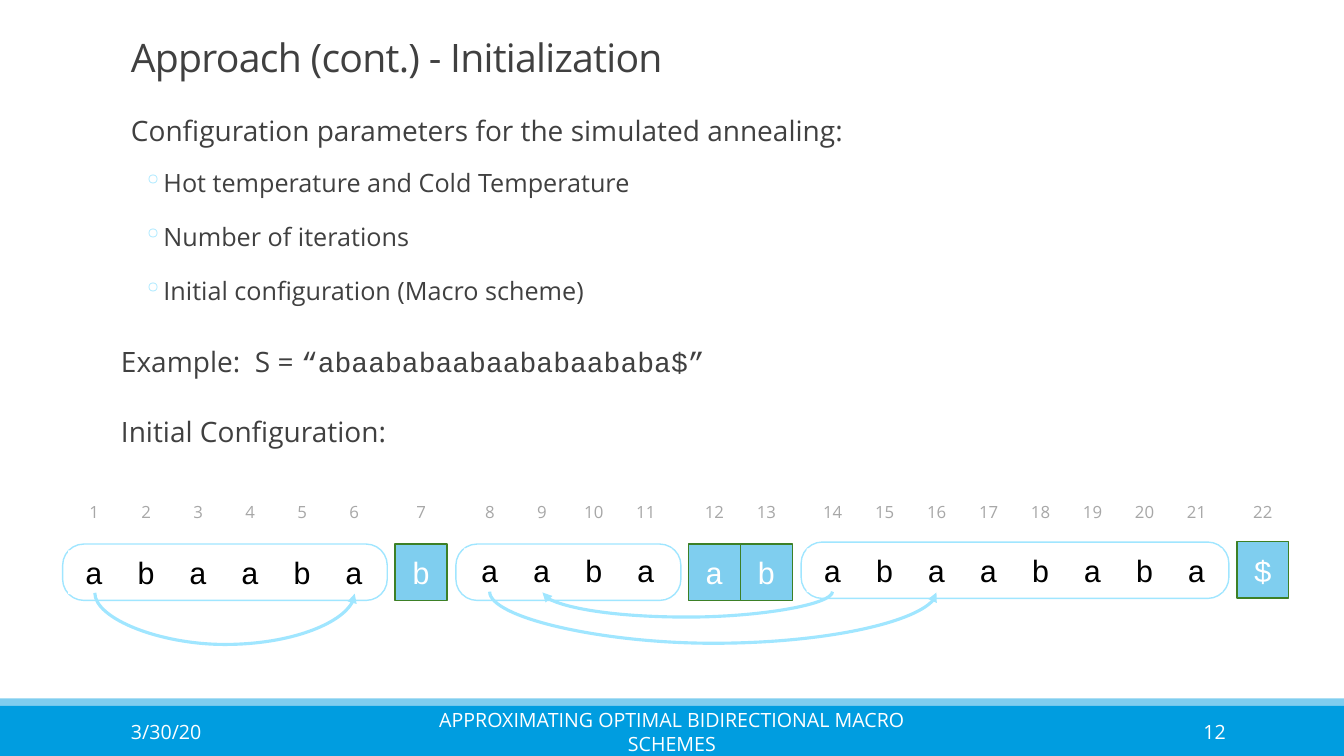
from lxml import etree
from pptx import Presentation
from pptx import util as u
from pptx.dml.color import RGBColor
from pptx.enum import shapes, text
from pptx.oxml import ns

WHITE = RGBColor(0xFF, 0xFF, 0xFF)
BLACK = RGBColor(0, 0, 0)
DARK_GREY = RGBColor(0x40, 0x40, 0x40)
INDEX_GREY = RGBColor(0xA7, 0xA7, 0xA7)
BLUE = RGBColor(0x00, 0x9D, 0xE0)
LIGHT_BLUE = RGBColor(0xA0, 0xE6, 0xFF)
LITERAL_BLUE = RGBColor(0x7F, 0xCE, 0xEF)
GREEN = RGBColor(0x3D, 0x80, 0x26)
SANS, MONO = "Open Sans", "Courier New"
ALIGN, ANCHOR = text.PP_ALIGN, text.MSO_ANCHOR

deck = Presentation()
deck.slide_width, deck.slide_height = u.Cm(33.87), u.Cm(19.05)
page = deck.slides.add_slide(deck.slide_layouts[6])


def add_block(kind, left, top, width, height, fill, line=None):
    block = page.shapes.add_shape(kind, u.Cm(left), u.Cm(top), u.Cm(width), u.Cm(height))
    block.shadow.inherit = False
    block.fill.solid()
    block.fill.fore_color.rgb = fill
    if line is None:
        block.line.fill.background()
    else:
        block.line.color.rgb = line
        block.line.width = u.Pt(1)
    return block


def add_span(para, words, size, color, font=SANS):
    span = para.add_run()
    span.text = words
    span.font.size = u.Pt(size)
    span.font.name = font
    span.font.color.rgb = color
    return span


# Footer bands
RECT = shapes.MSO_SHAPE.RECTANGLE
add_block(RECT, 0, 17.78, 33.87, 1.27, BLUE)
strip = add_block(RECT, 0, 17.6, 33.87, 0.18, BLUE)
strip_color = strip.fill._xPr.find(".//" + ns.qn("a:srgbClr"))
etree.SubElement(strip_color, ns.qn("a:alpha"), val="50000")

# Title and footer texts
for words, left, top, width, height, size, color, align in (
    ("Approach (cont.) - Initialization", 3.05, 0.74, 27.94, 1.57, 28, DARK_GREY, ALIGN.JUSTIFY),
    ("3/30/20", 3.05, 17.93, 6.86, 1.02, 14, WHITE, ALIGN.LEFT),
    ("APPROXIMATING OPTIMAL BIDIRECTIONAL MACRO SCHEMES", 10.24, 17.93, 13.39, 1.02, 14, WHITE, ALIGN.CENTER),
    ("12", 27.51, 17.93, 3.63, 1.02, 14, WHITE, ALIGN.RIGHT),
):
    box = page.shapes.add_textbox(u.Cm(left), u.Cm(top), u.Cm(width), u.Cm(height))
    box.text_frame.word_wrap = True
    box.text_frame.vertical_anchor = ANCHOR.MIDDLE
    para = box.text_frame.paragraphs[0]
    para.alignment = align
    span = add_span(para, words, size, color)
    if size == 28:
        para.line_spacing = 0.85
        span.font._element.set("spc", "-50")

# Body text: level 0 is indented, level 1 bulleted, None flush left
body = page.shapes.add_textbox(u.Cm(3.05), u.Cm(2.31), u.Cm(29.79), u.Cm(10.9)).text_frame
body.word_wrap = True
body.margin_left = body.margin_right = 0
for number, (level, spans) in enumerate((
    (0, [("Configuration parameters for the simulated annealing:", SANS)]),
    (1, [("Hot temperature and Cold Temperature", SANS)]),
    (1, [("Number of iterations", SANS)]),
    (1, [("Initial configuration (Macro scheme)", SANS)]),
    (None, [("Example:  S = ", SANS), ("“abaababaabaababaababa$”", MONO)]),
    (None, [("Initial Configuration:", SANS)]),
)):
    para = body.add_paragraph() if number else body.paragraphs[0]
    para.alignment = ALIGN.JUSTIFY
    para.line_spacing = 1.5
    para.space_before, para.space_after = (u.Pt(2), u.Pt(4)) if level == 1 else (u.Pt(12), u.Pt(2))
    for words, font in spans:
        add_span(para, words, 18 if level == 1 else 20, DARK_GREY, font)
    props = para._p.get_or_add_pPr()
    if level == 0:
        props.set("marL", str(u.Cm(0.25)))
    elif level == 1:
        para.level = 1
        props.set("marL", str(u.Cm(1.07)))
        props.set("indent", str(u.Cm(-0.51)))
        bullet_color = etree.SubElement(props, ns.qn("a:buClr"))
        etree.SubElement(bullet_color, ns.qn("a:srgbClr"), val=str(LIGHT_BLUE))
        etree.SubElement(props, ns.qn("a:buChar"), char="◦")

# Phrases of the macro scheme: letters, first cell, cell top, frame (left, top, width)
CELL, TALL, SHORT = 1.31, 1.42, 1.1
position = 0
for letters, start, top, frame in (
    ("abaaba", 1.72, 13.87, (1.58, 13.71, 8.18)),
    ("b", 9.96, 13.71, None),
    ("aaba", 11.69, 13.82, (11.49, 13.71, 5.67)),
    ("ab", 17.35, 13.71, None),
    ("abaababa", 20.33, 13.82, (20.19, 13.66, 10.78)),
    ("$", 31.17, 13.65, None),
):
    if frame:
        left, frame_top, width = frame
        outline = add_block(shapes.MSO_SHAPE.ROUNDED_RECTANGLE, left, frame_top, width, TALL, WHITE, LIGHT_BLUE)
        outline.adjustments[0] = 0.375
    for column, letter in enumerate(letters):
        position += 1
        left = start + column * CELL
        index = add_block(RECT, left, 11.85, CELL, TALL, WHITE)
        if frame:
            cell, ink = add_block(RECT, left, top, CELL, SHORT, WHITE), BLACK
        else:
            cell, ink = add_block(RECT, left, top, CELL, TALL, LITERAL_BLUE, GREEN), WHITE
        for block, words, size, color, font, anchor in (
            (index, str(position), 12, INDEX_GREY, SANS, ANCHOR.BOTTOM),
            (cell, letter, 22, ink, MONO, ANCHOR.MIDDLE),
        ):
            area = block.text_frame
            area.margin_left = area.margin_right = area.margin_top = area.margin_bottom = u.Cm(0.13)
            area.vertical_anchor = anchor
            area.paragraphs[0].alignment = ALIGN.CENTER
            add_span(area.paragraphs[0], words, size, color, font)

# Reference arrows: a thin upright curve turned on its side, bulging downwards
THIN = 0.02
for begin, end, level, depth in (
    (2.39, 8.94, 14.95, 1.3),
    (12.34, 23.6, 14.92, 1.3),
    (20.98, 13.67, 14.92, 0.64),
):
    middle, half = (begin + end) / 2, abs(end - begin) / 2
    sides = [middle - THIN / 2, middle + THIN / 2]
    rightward = end > begin
    if rightward:
        sides.reverse()
    arrow = page.shapes.add_connector(
        shapes.MSO_CONNECTOR.CURVE,
        u.Cm(sides[0]), u.Cm(level - half), u.Cm(sides[1]), u.Cm(level + half))
    arrow.line.color.rgb = LIGHT_BLUE
    arrow.line.width = u.Pt(2.25)
    props = arrow._element.spPr
    props.find(ns.qn("a:xfrm")).set("rot", str((270 if rightward else 90) * 60000))
    guides = props.find(ns.qn("a:prstGeom")).find(ns.qn("a:avLst"))
    bulge = round(depth / THIN * 100000)
    etree.SubElement(guides, ns.qn("a:gd"), name="adj1", fmla=f"val {bulge}")
    etree.SubElement(arrow.line._get_or_add_ln(), ns.qn("a:tailEnd"), type="triangle")
    etree.SubElement(props, ns.qn("a:effectLst"))

deck.save("out.pptx")
